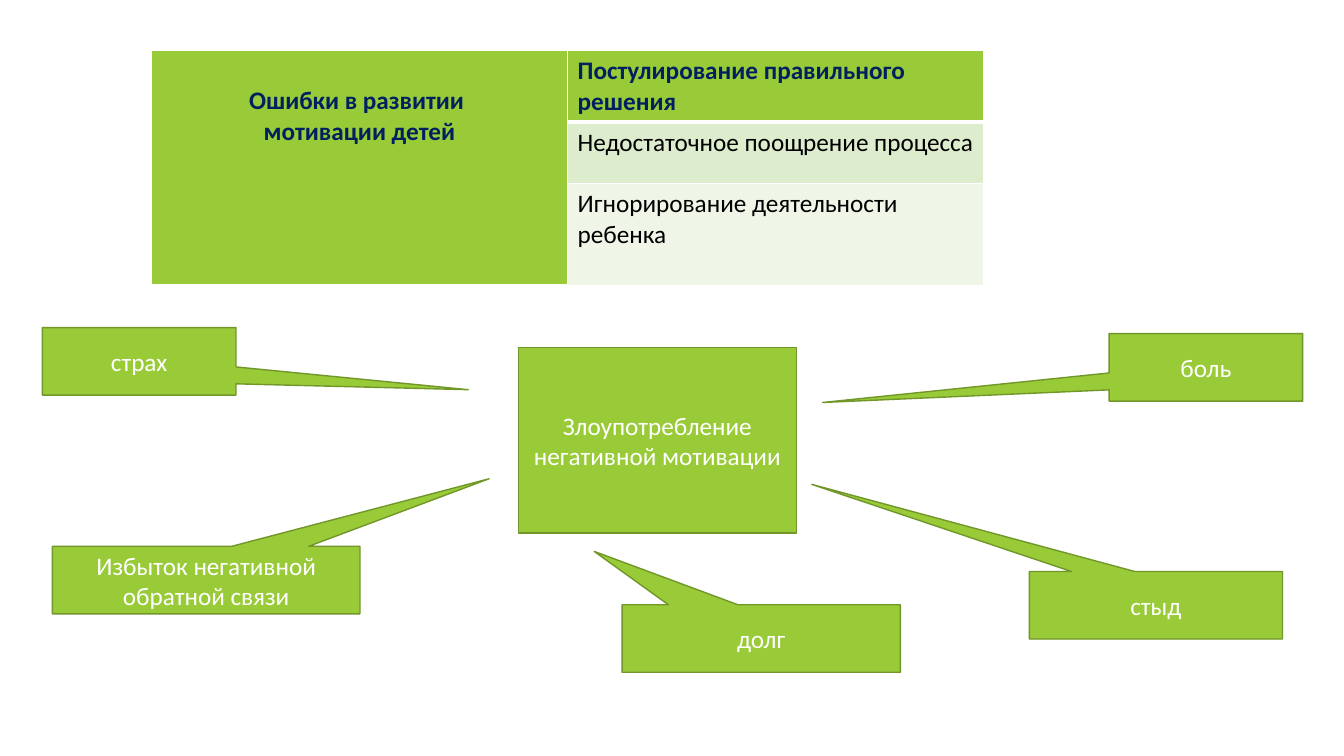
from dataclasses import dataclass

from lxml.etree import SubElement
from pptx import Presentation
from pptx.dml.color import RGBColor
from pptx.enum.shapes import MSO_SHAPE
from pptx.enum.text import MSO_ANCHOR, PP_ALIGN
from pptx.oxml.ns import qn
from pptx.slide import Slide
from pptx.table import _Cell
from pptx.text.text import TextFrame
from pptx.util import Inches, Pt

GREEN = "99CB38"
DARK_GREEN = "719629"
NAVY = "002060"
WHITE = "FFFFFF"
BLACK = "000000"


@dataclass
class Callout:
    text: str
    left: float
    top: float
    width: float
    tip: tuple[float, float]
    height: float = 0.67


@dataclass
class Entry:
    lines: list[str]
    row: int
    column: int
    fill: str
    color: str = BLACK
    bold: bool = False
    alignment: PP_ALIGN = PP_ALIGN.LEFT
    margin_top: float = 0.05
    bottom_border: int = 1


CALLOUTS = [
    Callout("боль", 11, 3.31, 1.92, (-1.98, 0.52)),
    Callout("стыд", 10.21, 5.67, 2.51, (-1.36, -1.79)),
    Callout("долг", 6.17, 6, 2.76, (-0.6, -1.29)),
    Callout("Избыток негативной обратной связи", 0.52, 5.42, 3.05, (0.92, -1.5)),
    Callout("страх", 0.42, 3.25, 1.92, (1.7, 0.42)),
]

ENTRIES = [
    Entry(["Ошибки в развитии ", "мотивации детей"], 0, 0, GREEN, NAVY, True,
          PP_ALIGN.CENTER, 0.35, 3),
    Entry(["Постулирование правильного решения"], 0, 1, GREEN, NAVY, True, bottom_border=3),
    Entry(["Недостаточное поощрение процесса"], 1, 1, "DEECCE"),
    Entry(["Игнорирование деятельности ребенка"], 2, 1, "EFF6E8"),
]

ROW_HEIGHTS = [0.7, 0.61, 1.01]
COLUMN_WIDTH = 4.13


def rgb(color: str) -> RGBColor:
    return RGBColor.from_string(color)


def write(frame: TextFrame, lines: list[str], color: str, bold: bool,
          alignment: PP_ALIGN) -> None:
    for index, line in enumerate(lines):
        para = frame.add_paragraph() if index else frame.paragraphs[0]
        para.alignment = alignment
        span = para.add_run()
        span.text = line
        for name, value in {"name": "Calibri", "size": Pt(18), "bold": bold}.items():
            setattr(span.font, name, value)
        span.font.color.rgb = rgb(color)


def set_borders(cell: _Cell, bottom_width: int) -> None:
    properties = cell._tc.get_or_add_tcPr()
    for side, width in {"L": 1, "R": 1, "T": 1, "B": bottom_width}.items():
        line = SubElement(properties, qn(f"a:ln{side}"), w=str(Pt(width)))
        SubElement(SubElement(line, qn("a:solidFill")), qn("a:srgbClr"), val=WHITE)


def add_mistakes_table(page: Slide) -> None:
    table = page.shapes.add_table(
        len(ROW_HEIGHTS), 2, Inches(1.5), Inches(0.5),
        Inches(2 * COLUMN_WIDTH), Inches(sum(ROW_HEIGHTS)),
    ).table
    for column in table.columns:
        column.width = Inches(COLUMN_WIDTH)
    for row, height in zip(table.rows, ROW_HEIGHTS):
        row.height = Inches(height)
    table.cell(0, 0).merge(table.cell(len(ROW_HEIGHTS) - 1, 0))
    for entry in ENTRIES:
        cell = table.cell(entry.row, entry.column)
        cell.margin_top = Inches(entry.margin_top)
        set_borders(cell, entry.bottom_border)
        cell.fill.solid()
        cell.fill.fore_color.rgb = rgb(entry.fill)
        write(cell.text_frame, entry.lines, entry.color, entry.bold, entry.alignment)


def add_box(page: Slide, kind: MSO_SHAPE, text: str, left: float, top: float,
            width: float, height: float, adjustments: tuple[float, ...] = ()) -> None:
    box = page.shapes.add_shape(kind, Inches(left), Inches(top), Inches(width), Inches(height))
    for index, value in enumerate(adjustments):
        box.adjustments[index] = value
    box.shadow.inherit = False
    box.fill.solid()
    box.fill.fore_color.rgb = rgb(GREEN)
    box.line.color.rgb = rgb(DARK_GREEN)
    box.line.width = Pt(1)
    frame = box.text_frame
    for name, value in {"word_wrap": True, "vertical_anchor": MSO_ANCHOR.MIDDLE}.items():
        setattr(frame, name, value)
    write(frame, [text], WHITE, False, PP_ALIGN.CENTER)


def main() -> None:
    deck = Presentation()
    deck.slide_width = Inches(13.33)
    deck.slide_height = Inches(7.5)
    page = deck.slides.add_slide(deck.slide_layouts[6])
    add_mistakes_table(page)
    add_box(page, MSO_SHAPE.RECTANGLE, "Злоупотребление негативной мотивации",
            5.14, 3.45, 2.76, 1.84)
    for callout in CALLOUTS:
        add_box(page, MSO_SHAPE.RECTANGULAR_CALLOUT, callout.text, callout.left,
                callout.top, callout.width, callout.height, callout.tip)
    deck.save("out.pptx")


if __name__ == "__main__":
    main()
